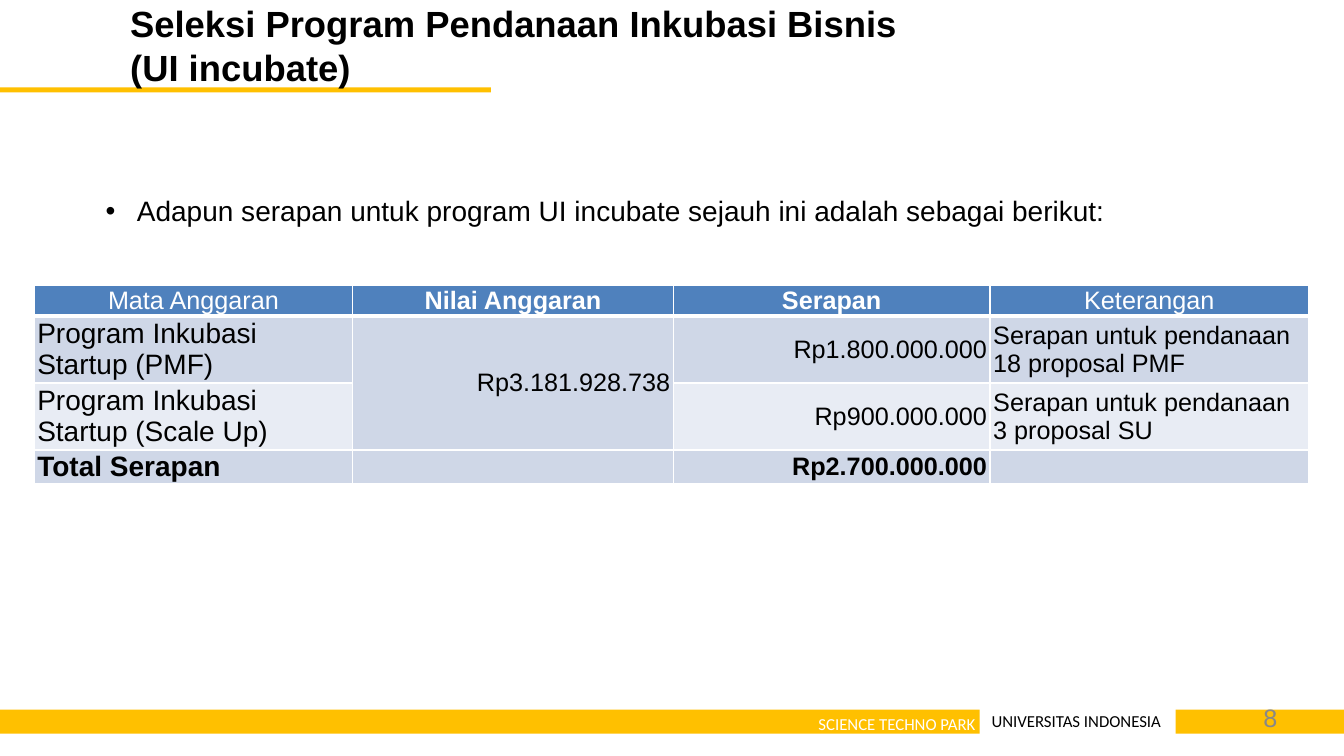
from lxml import etree
from pptx import Presentation
from pptx.dml.color import RGBColor
from pptx.enum.shapes import MSO_SHAPE
from pptx.enum.text import MSO_ANCHOR, MSO_AUTO_SIZE, PP_ALIGN
from pptx.oxml.ns import qn
from pptx.util import Cm, Pt

RECTANGLE = MSO_SHAPE.RECTANGLE
TOP, MIDDLE = MSO_ANCHOR.TOP, MSO_ANCHOR.MIDDLE
NO_AUTOFIT = MSO_AUTO_SIZE.NONE
LEFT, CENTER, RIGHT, JUSTIFY = PP_ALIGN.LEFT, PP_ALIGN.CENTER, PP_ALIGN.RIGHT, PP_ALIGN.JUSTIFY

BLACK, WHITE, GRAY, YELLOW = "000000", "FFFFFF", "888888", "FFC000"
HEADER_BLUE, BAND_DARK, BAND_LIGHT = "4F81BD", "CFD7E7", "E8ECF4"
SLIDE_WIDTH, SLIDE_HEIGHT = 33.87, 19.05

COLUMN_WIDTHS = [8.03, 8.08, 7.98, 8.03]
ROW_HEIGHTS = [0.77, 1.69, 1.69, 0.84]
ROW_FILLS = [HEADER_BLUE, BAND_DARK, BAND_LIGHT, BAND_DARK]
COLUMN_ALIGNMENTS = [LEFT, RIGHT, RIGHT, LEFT]
COLUMN_SIZES = [20, 18, 18, 18]
BOLD_CELLS = {(0, 1), (0, 2), (3, 0), (3, 2)}
BUDGET_ROWS = [
    ["Mata Anggaran", "Nilai Anggaran", "Serapan", "Keterangan"],
    ["Program Inkubasi Startup (PMF)", "Rp3.181.928.738", "Rp1.800.000.000",
     "Serapan untuk pendanaan 18 proposal PMF"],
    ["Program Inkubasi Startup (Scale Up)", "", "Rp900.000.000",
     "Serapan untuk pendanaan 3 proposal SU"],
    ["Total Serapan", "", "Rp2.700.000.000", ""],
]


def color(value):
    return RGBColor.from_string(value)


def format_paragraph(paragraph, size, font_color, name="Arial", bold=False, alignment=LEFT):
    paragraph.alignment = alignment
    paragraph.font.name = name
    paragraph.font.size = Pt(size)
    paragraph.font.bold = bold
    paragraph.font.color.rgb = color(font_color)


def place(shape, left, top, width, height):
    shape.left, shape.top = Cm(left), Cm(top)
    shape.width, shape.height = Cm(width), Cm(height)


def prepare_frame(frame, horizontal=0, vertical=0):
    frame.word_wrap = True
    frame.auto_size = NO_AUTOFIT
    frame.vertical_anchor = TOP
    frame.margin_left = frame.margin_right = Cm(horizontal)
    frame.margin_top = frame.margin_bottom = Cm(vertical)


def add_label(slide, box, text, size, font_color, name, alignment=LEFT):
    frame = slide.shapes.add_textbox(*map(Cm, box)).text_frame
    prepare_frame(frame)
    frame.text = text
    format_paragraph(frame.paragraphs[0], size, font_color, name, alignment=alignment)


def add_bar(slide, left, top, width, height):
    bar = slide.shapes.add_shape(RECTANGLE, Cm(left), Cm(top), Cm(width), Cm(height))
    bar.shadow.inherit = False
    bar.fill.solid()
    bar.fill.fore_color.rgb = color(YELLOW)
    bar.line.fill.background()


def add_heading(slide, left, top, width, height):
    add_bar(slide, 0, top + 2.17, 12.37, 0.13)
    title = slide.shapes.title
    title.element.getparent().append(title.element)
    place(title, left, top, width, height)
    prepare_frame(title.text_frame)
    title.text_frame.text = "Seleksi Program Pendanaan Inkubasi Bisnis (UI incubate)"
    format_paragraph(title.text_frame.paragraphs[0], 26, BLACK, bold=True)


def add_introduction(slide, left, top, width, height):
    frame = slide.shapes.add_textbox(Cm(left), Cm(top), Cm(width), Cm(height)).text_frame
    prepare_frame(frame, 0.25, 0.13)
    frame.text = "Adapun serapan untuk program UI incubate sejauh ini adalah sebagai berikut:"
    paragraph = frame.paragraphs[0]
    paragraph.line_spacing = 1.33
    properties = paragraph._p.get_or_add_pPr()
    properties.set("marL", str(Cm(0.79)))
    properties.set("indent", str(-Cm(0.79)))
    etree.SubElement(properties, qn("a:buFont"), typeface="Arial")
    etree.SubElement(properties, qn("a:buChar"), char="•")
    format_paragraph(paragraph, 20, BLACK, alignment=JUSTIFY)


def set_borders(cell, bottom_width):
    properties = cell._tc.get_or_add_tcPr()
    widths = {"a:lnL": 1, "a:lnR": 1, "a:lnT": 1, "a:lnB": bottom_width}
    for index, (tag, width) in enumerate(widths.items()):
        line = etree.Element(qn(tag), w=str(Pt(width)))
        fill = etree.SubElement(line, qn("a:solidFill"))
        etree.SubElement(fill, qn("a:srgbClr"), val=WHITE)
        properties.insert(index, line)


def add_budget_table(slide, left, top):
    table = slide.shapes.add_table(
        len(ROW_HEIGHTS), len(COLUMN_WIDTHS), Cm(left), Cm(top),
        Cm(sum(COLUMN_WIDTHS)), Cm(sum(ROW_HEIGHTS))).table
    table.horz_banding = False
    for column, width in zip(table.columns, COLUMN_WIDTHS):
        column.width = Cm(width)
    for row_index, texts in enumerate(BUDGET_ROWS):
        is_header = row_index == 0
        table.rows[row_index].height = Cm(ROW_HEIGHTS[row_index])
        for column_index, text in enumerate(texts):
            cell = table.cell(row_index, column_index)
            cell.text = text
            cell.vertical_anchor = MIDDLE
            cell.margin_left = cell.margin_right = Cm(0.08)
            cell.margin_top = cell.margin_bottom = 0
            cell.fill.solid()
            cell.fill.fore_color.rgb = color(ROW_FILLS[row_index])
            set_borders(cell, 3 if is_header else 1)
            format_paragraph(
                cell.text_frame.paragraphs[0],
                18 if is_header else COLUMN_SIZES[column_index],
                WHITE if is_header else BLACK,
                bold=(row_index, column_index) in BOLD_CELLS,
                alignment=CENTER if is_header else COLUMN_ALIGNMENTS[column_index])
    table.cell(1, 1).merge(table.cell(2, 1))


def add_footer(slide, left, top, width, height):
    gap_left, gap_right = left + 24.69, left + 29.63
    add_bar(slide, left, top, gap_left - left, height)
    add_bar(slide, gap_right, top, left + width - gap_right, height)
    add_label(slide, (gap_left - 8.89, top + 0.1, 8.79, 0.53),
              "SCIENCE TECHNO PARK", 12, WHITE, "Calibri", RIGHT)
    add_label(slide, (gap_left + 0.3, top + 0.03, 4.4, 0.53),
              "UNIVERSITAS INDONESIA", 12, BLACK, "Calibri")
    add_label(slide, (gap_left - 0.3, top - 0.18, 7.8, 0.97), "8", 18, GRAY, "Arial", RIGHT)


def main():
    presentation = Presentation()
    presentation.slide_width, presentation.slide_height = Cm(SLIDE_WIDTH), Cm(SLIDE_HEIGHT)
    slide = presentation.slides.add_slide(presentation.slide_layouts[5])
    add_heading(slide, 3.28, 0.03, 20.47, 2.26)
    add_introduction(slide, 2.41, 4.47, 28.88, 1.27)
    add_budget_table(slide, 0.86, 7.19)
    add_footer(slide, 0, 17.88, SLIDE_WIDTH, 0.61)
    presentation.save("out.pptx")


if __name__ == "__main__":
    main()
